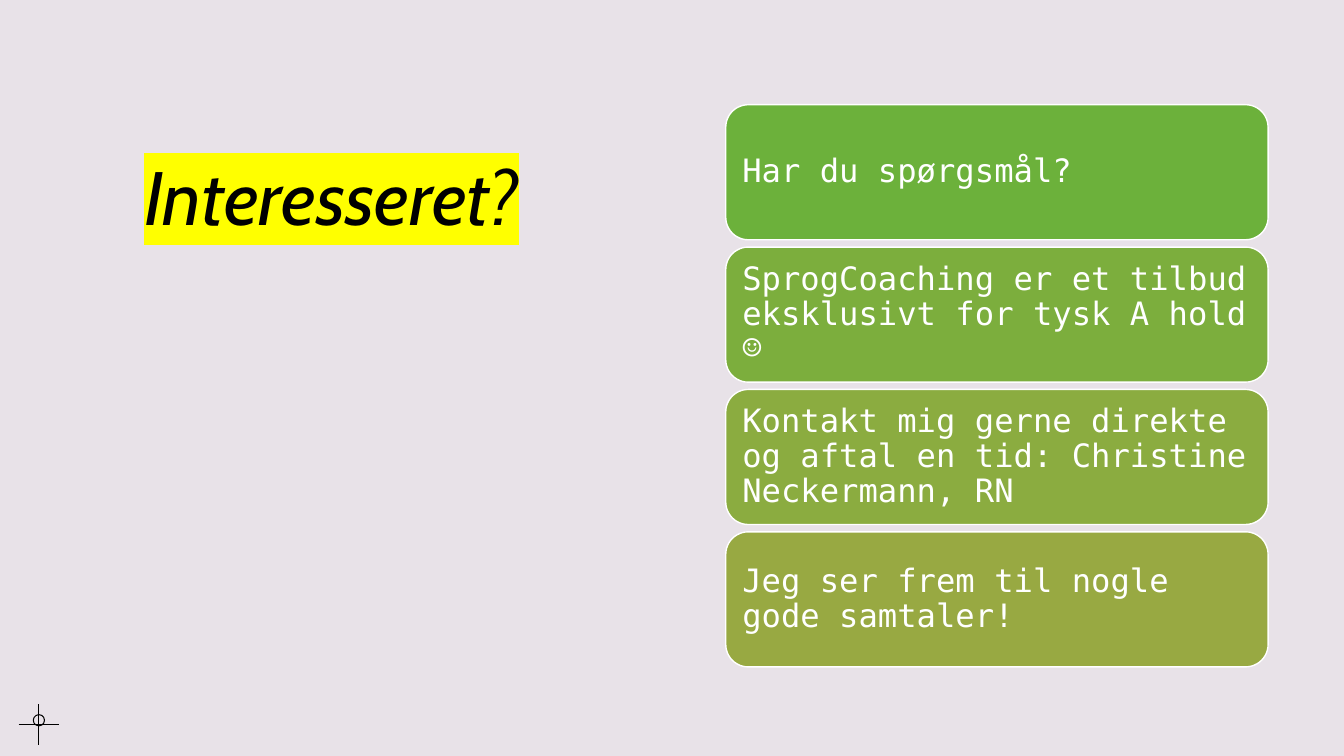
import pptx
import pptx.util
import pptx.dml.color
import pptx.enum.shapes
import pptx.enum.text
import pptx.oxml
import pptx.oxml.ns
from dataclasses import dataclass

Pt = pptx.util.Pt
SHAPES = pptx.enum.shapes.MSO_SHAPE
ANCHORS = pptx.enum.text.MSO_ANCHOR

TITLE = "Interesseret?"
CARDS = [
    ("Har du spørgsmål?", "6CB13B"),
    ("SprogCoaching er et tilbud eksklusivt for tysk A hold ☺", "7CAE3D"),
    ("Kontakt mig gerne direkte og aftal en tid: Christine Neckermann, RN", "8BAC40"),
    ("Jeg ser frem til nogle gode samtaler!", "98A942"),
]


@dataclass(frozen=True)
class Theme:
    background: str = "E8E2E8"
    ink: str = "000000"
    light: str = "FFFFFF"
    marker: str = "FFFF00"
    title_font: str = "Cabin"
    card_font: str = "DejaVu Sans Mono"
    title_size: float = 54
    card_size: float = 23


THEME = Theme()
CARD_LEFT, CARD_TOP, CARD_WIDTH, CARD_HEIGHT, CARD_GAP = 518.4, 74.8, 387.4, 96.5, 5.2
CROSS_X, CROSS_Y, CROSS_ARM = 27.8, 517.5, 14.4
RING_SIZE, RING_RISE = 8, 3


def rgb(code):
    return pptx.dml.color.RGBColor.from_string(code)


def write(box, text, *, font, size, color, spacing, italic=False,
          highlight=None, anchor=ANCHORS.TOP, inset_y=3.6):
    frame = box.text_frame
    frame.word_wrap = True
    frame.vertical_anchor = anchor
    frame.margin_left = frame.margin_right = Pt(7.2)
    frame.margin_top = frame.margin_bottom = Pt(inset_y)
    para = frame.paragraphs[0]
    para.alignment = pptx.enum.text.PP_ALIGN.LEFT
    para.line_spacing = spacing
    span = para.add_run()
    span.text = text
    span.font.name, span.font.size, span.font.italic = font, Pt(size), italic
    span.font.color.rgb = rgb(color)
    if highlight:
        mark = pptx.oxml.parse_xml(
            f'<a:highlight {pptx.oxml.ns.nsdecls("a")}>'
            f'<a:srgbClr val="{highlight}"/></a:highlight>')
        span.font.fill  # the highlight must stand between fill and typeface
        span.font._element.find(pptx.oxml.ns.qn("a:latin")).addprevious(mark)


def add_outlined(page, kind, left, top, width, height, *, line, weight, fill=None):
    shape = page.shapes.add_shape(kind, Pt(left), Pt(top), Pt(width), Pt(height))
    shape.shadow.inherit = False
    if fill:
        shape.fill.solid()
        shape.fill.fore_color.rgb = rgb(fill)
    else:
        shape.fill.background()
    shape.line.color.rgb = rgb(line)
    shape.line.width = Pt(weight)
    return shape


def add_crosshair(page):
    for dx, dy in ((CROSS_ARM, 0), (0, CROSS_ARM)):
        line = page.shapes.add_connector(
            pptx.enum.shapes.MSO_CONNECTOR.STRAIGHT,
            Pt(CROSS_X - dx), Pt(CROSS_Y - dy), Pt(CROSS_X + dx), Pt(CROSS_Y + dy))
        line.line.color.rgb = rgb(THEME.ink)
        line.line.width = Pt(0.75)
        line._element.spPr.append(pptx.oxml.parse_xml(
            f'<a:effectLst {pptx.oxml.ns.nsdecls("a")}/>'))
    add_outlined(page, SHAPES.OVAL, CROSS_X - RING_SIZE / 2,
                 CROSS_Y - RING_RISE - RING_SIZE / 2, RING_SIZE, RING_SIZE,
                 line=THEME.ink, weight=0.75)


def add_cards(page):
    for index, (text, fill) in enumerate(CARDS):
        top = CARD_TOP + index * (CARD_HEIGHT + CARD_GAP)
        card = add_outlined(page, SHAPES.ROUNDED_RECTANGLE, CARD_LEFT, top,
                            CARD_WIDTH, CARD_HEIGHT, line=THEME.light, weight=1, fill=fill)
        write(card, text, font=THEME.card_font, size=THEME.card_size, color=THEME.light,
              spacing=0.9, anchor=ANCHORS.MIDDLE, inset_y=7.2)


def main():
    deck = pptx.Presentation()
    deck.slide_width, deck.slide_height = Pt(960), Pt(540)
    page = deck.slides.add_slide(deck.slide_layouts[6])
    page.background.fill.solid()
    page.background.fill.fore_color.rgb = rgb(THEME.background)
    title = page.shapes.add_textbox(Pt(96), Pt(90.7), Pt(412), Pt(355.7))
    write(title, TITLE, font=THEME.title_font, size=THEME.title_size, color=THEME.ink,
          spacing=1.2, italic=True, highlight=THEME.marker)
    add_crosshair(page)
    add_cards(page)
    deck.save("out.pptx")


if __name__ == "__main__":
    main()
